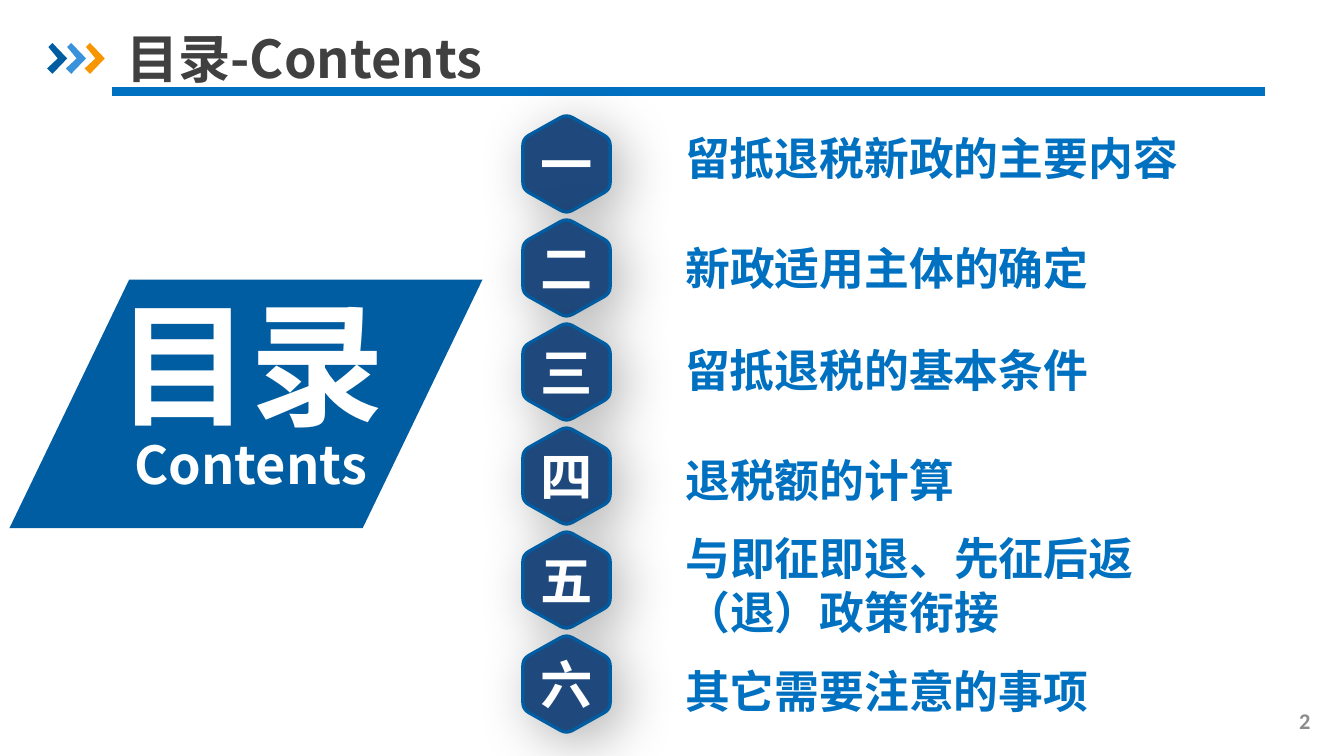
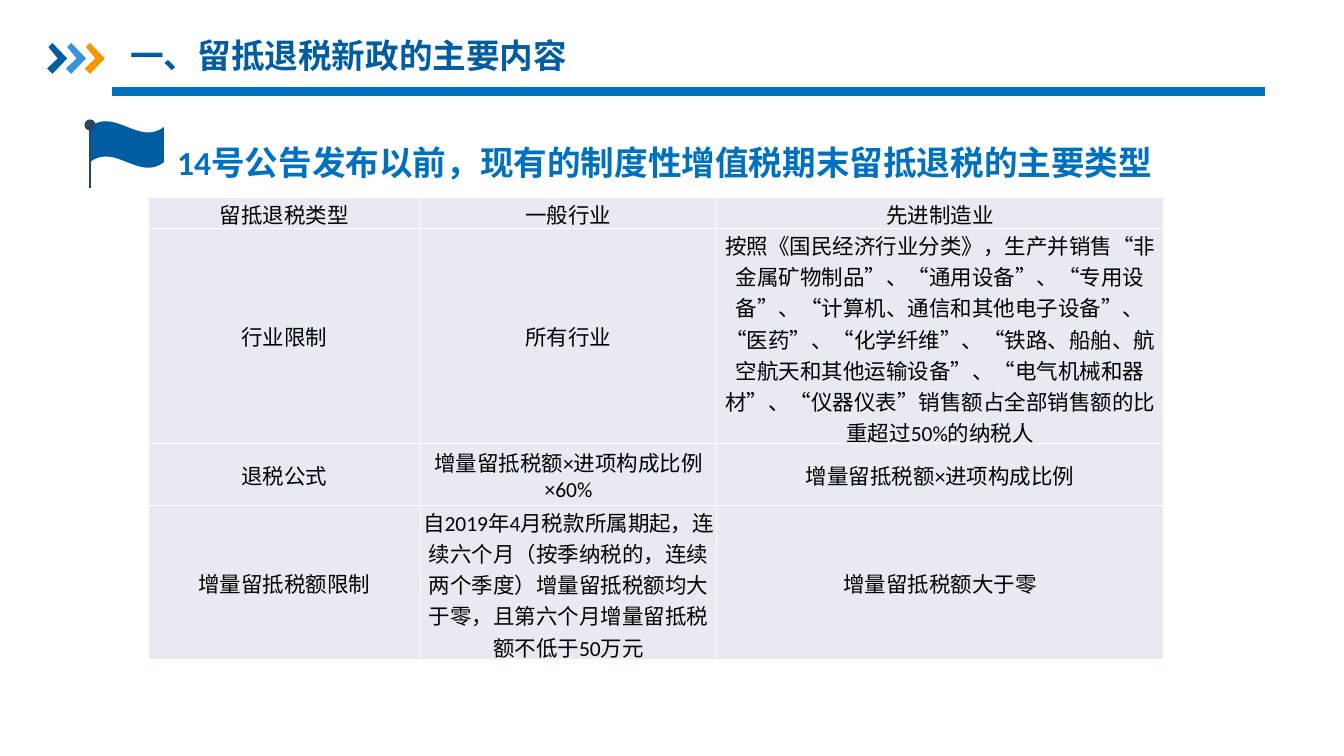
import lxml.etree
import pptx
import pptx.dml.color
import pptx.enum.shapes
import pptx.enum.text
import pptx.oxml
import pptx.oxml.ns
import pptx.util

RGB = pptx.dml.color.RGBColor
SHAPE = pptx.enum.shapes.MSO_SHAPE
STRAIGHT = pptx.enum.shapes.MSO_CONNECTOR.STRAIGHT
ALIGN = pptx.enum.text.PP_ALIGN
ANCHOR = pptx.enum.text.MSO_ANCHOR
Pt = pptx.util.Pt
qn = pptx.oxml.ns.qn

DEEP_BLUE = RGB(0x00, 0x5D, 0xA2)
BRIGHT_BLUE = RGB(0x00, 0x70, 0xC0)
SKY_BLUE = RGB(0x39, 0x92, 0xDB)
ORANGE = RGB(0xF7, 0x96, 0x00)
NAVY = RGB(0x1F, 0x49, 0x7D)
POLE_BLUE = RGB(0x25, 0x46, 0x65)
DARK_GREY = RGB(0x40, 0x40, 0x40)
MID_GREY = RGB(0x8C, 0x8C, 0x8C)
CELL_GREY = RGB(0xE7, 0xEA, 0xF0)
WHITE = RGB(0xFF, 0xFF, 0xFF)
BLACK = RGB(0, 0, 0)

SANS = "Noto Sans CJK SC"
LATIN = "Calibri"
CELL = pptx.util.Inches(0.1)  # the slide is 100 columns by 56.25 rows


def grid(*cells):
    """Turn numbers of columns or rows into lengths."""
    return [pptx.util.Emu(round(cell * CELL)) for cell in cells]


def write(frame, lines, size, color, font=LATIN, east_asian=None, bold=True,
          align=ALIGN.LEFT, anchor=ANCHOR.TOP, margins=(1, 0.5, 1, 0.5)):
    """Fill a text frame; returns its paragraphs."""
    left, top, right, bottom = grid(*margins)
    layout = {"word_wrap": True, "vertical_anchor": anchor, "margin_left": left,
              "margin_top": top, "margin_right": right, "margin_bottom": bottom}
    for name, value in layout.items():
        setattr(frame, name, value)
    frame.text = "\n".join(lines)
    for paragraph in frame.paragraphs:
        paragraph.alignment = align
        for run in paragraph.runs:
            for name, value in {"size": Pt(size), "bold": bold, "name": font}.items():
                setattr(run.font, name, value)
            run.font.color.rgb = color
            run.font._element.find(qn("a:latin")).addnext(
                pptx.oxml.parse_xml(
                    f'<a:ea {pptx.oxml.ns.nsdecls("a")} typeface="{east_asian or font}"/>'))
    return frame.paragraphs


deck = pptx.Presentation()
deck.slide_width, deck.slide_height = grid(100, 56.25)
contents, types = [deck.slides.add_slide(deck.slide_layouts[6]) for _ in range(2)]

# Shared header: blue rule and three chevrons
CHEVRON = [(0.1, 0.3), (0.4, 0), (1.5, 1.15), (0.4, 2.3), (0, 1.9), (0.8, 1.15)]
for slide in (contents, types):
    rule = slide.shapes.add_connector(STRAIGHT, *grid(8.3, 6.8, 94.1, 6.8))
    rule.line.color.rgb = BRIGHT_BLUE
    rule.line.width = Pt(5)
    lxml.etree.SubElement(rule._element.spPr, qn("a:effectLst"))
    for step, color in enumerate((DEEP_BLUE, SKY_BLUE, ORANGE)):
        points = [grid(3.5 + 1.4 * step + x, 3.2 + y) for x, y in CHEVRON]
        builder = slide.shapes.build_freeform(*points[0])
        builder.add_line_segments(points[1:])
        chevron = builder.convert_to_shape()
        chevron.shadow.inherit = False
        chevron.fill.solid()
        chevron.fill.fore_color.rgb = color
        chevron.line.fill.background()

# Slide 1: contents
shapes = contents.shapes
write(shapes.add_textbox(*grid(75.2, 52.1, 23.3, 3)).text_frame, ["2"], 12, MID_GREY,
      align=ALIGN.RIGHT, anchor=ANCHOR.MIDDLE)
write(shapes.add_textbox(*grid(9.4, 2.2, 30.7, 4.2)).text_frame, ["目录-Contents"], 28,
      DARK_GREY, SANS, anchor=ANCHOR.MIDDLE, margins=(0, 0.5, 0, 0.5))

banner = shapes.add_shape(SHAPE.PARALLELOGRAM, *grid(0.7, 20.8, 35.2, 18.5))
banner.adjustments[0] = 0.482
banner.shadow.inherit = False
banner.fill.solid()
banner.fill.fore_color.rgb = DEEP_BLUE
banner.line.fill.background()
chinese, english = write(
    shapes.add_textbox(*grid(6.3, 26.8, 24.7, 5.4)).text_frame, ["目录", "Contents"], 72,
    WHITE, SANS, align=ALIGN.CENTER, anchor=ANCHOR.MIDDLE, margins=(1, 0.5, 1, 1.7))
english.runs[0].font.size = Pt(28)
english.line_spacing = 0.85

# Hexagon outline, with each corner rounded by a quadratic curve
HEX_WIDTH, HEX_HEIGHT, HEX_PITCH = 6.5, 7.2, 7.74
CORNERS = [(3.25, -0.1), (6.5, 1.72), (6.5, 5.48), (3.25, 7.3), (0, 5.48), (0, 1.72)]
TRIM = 0.14
hexagon = []
for i, corner in enumerate(CORNERS):
    enter, leave = [[c + TRIM * (n - c) for c, n in zip(corner, neighbour)]
                    for neighbour in (CORNERS[i - 1], CORNERS[(i + 1) % 6])]
    for t in (0, 0.25, 0.5, 0.75, 1):
        hexagon.append([(1 - t) ** 2 * a + 2 * t * (1 - t) * c + t * t * b
                        for a, c, b in zip(enter, corner, leave)])

SOFT_SHADOW = (f'<a:outerShdw {pptx.oxml.ns.nsdecls("a")} blurRad="{Pt(30)}" '
               f'dist="{Pt(8)}" dir="2700000" algn="tl" rotWithShape="0">'
               '<a:srgbClr val="000000"><a:alpha val="30000"/></a:srgbClr></a:outerShdw>')
chapters = [
    ("一", "留抵退税新政的主要内容", 9.2, 39.4, 4.7),
    ("二", "新政适用主体的确定", 17.4, 36.9, 4.7),
    ("三", "留抵退税的基本条件", 25, 39.4, 4.7),
    ("四", "退税额的计算", 33.2, 36.9, 4.8),
    ("五", "与即征即退、先征后返（退）政策衔接", 39, 44.9, 8.5),
    ("六", "其它需要注意的事项", 48.9, 47.3, 4.7),
]
for row, (number, heading, top, width, height) in enumerate(chapters):
    points = [grid(38.9 + x, 8.6 + row * HEX_PITCH + y) for x, y in hexagon]
    builder = shapes.build_freeform(*points[0])
    builder.add_line_segments(points[1:])
    badge = builder.convert_to_shape()
    badge.fill.solid()
    badge.fill.fore_color.rgb = NAVY
    badge.line.color.rgb = DEEP_BLUE
    badge.line.width = Pt(1.75)
    badge.shadow.inherit = False
    badge._element.spPr.find(qn("a:effectLst")).append(pptx.oxml.parse_xml(SOFT_SHADOW))
    write(badge.text_frame, [number], 28, WHITE, SANS, align=ALIGN.CENTER,
          anchor=ANCHOR.MIDDLE)
    write(shapes.add_textbox(*grid(50, top, width, height)).text_frame, [heading], 24,
          BRIGHT_BLUE)

# Slide 2: refund types before the announcement
shapes = types.shapes
write(shapes.add_textbox(*grid(9, 2.2, 43.6, 6.8)).text_frame,
      ["一、留抵退税新政的主要内容"], 18, DEEP_BLUE, SANS, margins=(0.7, 0.4, 0.7, 0.4))
subtitle = write(shapes.add_textbox(*grid(12.2, 8.6, 78.8, 5.4)).text_frame,
                 ["14号公告发布以前，现有的制度性增值税期末留抵退税的主要类型"],
                 18, BRIGHT_BLUE)
subtitle[0].line_spacing = 1.5

COLUMNS = (20.3, 22, 33.3)
ROWS = (2.3, 16, 4.6, 11.5)
refund_rules = [
    ("留抵退税类型", "一般行业", "先进制造业"),
    ("行业限制", "所有行业",
     "按照《国民经济行业分类》，生产并销售“非金属矿物制品”、“通用设备”、“专用设备”、"
     "“计算机、通信和其他电子设备”、“医药”、“化学纤维”、“铁路、船舶、航空航天和其他运输设备”、"
     "“电气机械和器材”、“仪器仪表”销售额占全部销售额的比重超过50%的纳税人"),
    ("退税公式", "增量留抵税额×进项构成比例×60%", "增量留抵税额×进项构成比例"),
    ("增量留抵税额限制",
     "自2019年4月税款所属期起，连续六个月（按季纳税的，连续两个季度）增量留抵税额均大于零，"
     "且第六个月增量留抵税额不低于50万元",
     "增量留抵税额大于零"),
]
table = shapes.add_table(len(ROWS), len(COLUMNS),
                         *grid(11, 14.7, sum(COLUMNS), sum(ROWS))).table
for column, width in zip(table.columns, grid(*COLUMNS)):
    column.width = width
for row, height, texts in zip(table.rows, grid(*ROWS), refund_rules):
    row.height = height
    for cell, text in zip(row.cells, texts):
        write(cell.text_frame, [text], 11.5, BLACK, east_asian=SANS, bold=False,
              align=ALIGN.CENTER)
        left, top, right, bottom = grid(0.1, 0.1, 0.1, 0)
        cell_format = {"vertical_anchor": ANCHOR.MIDDLE, "margin_left": left,
                       "margin_top": top, "margin_right": right, "margin_bottom": bottom}
        for name, value in cell_format.items():
            setattr(cell, name, value)
        properties = cell._tc.get_or_add_tcPr()
        for side in ("a:lnL", "a:lnR", "a:lnT", "a:lnB"):
            border = lxml.etree.SubElement(properties, qn(side), w=str(Pt(1)))
            fill = lxml.etree.SubElement(border, qn("a:solidFill"))
            lxml.etree.SubElement(fill, qn("a:srgbClr"), val=str(WHITE))
        cell.fill.solid()
        cell.fill.fore_color.rgb = CELL_GREY

flag = shapes.add_shape(SHAPE.WAVE, *grid(6.7, 9, 5.5, 3.5))
flag.shadow.inherit = False
flag.fill.solid()
flag.fill.fore_color.rgb = DEEP_BLUE
flag.line.fill.background()
pole = shapes.add_connector(STRAIGHT, *grid(6.7, 14, 6.7, 9.3))
pole.line.color.rgb = POLE_BLUE
pole.line.width = Pt(1)
lxml.etree.SubElement(pole.line._get_or_add_ln(), qn("a:tailEnd"), type="oval")
lxml.etree.SubElement(pole._element.spPr, qn("a:effectLst"))

deck.save("out.pptx")
